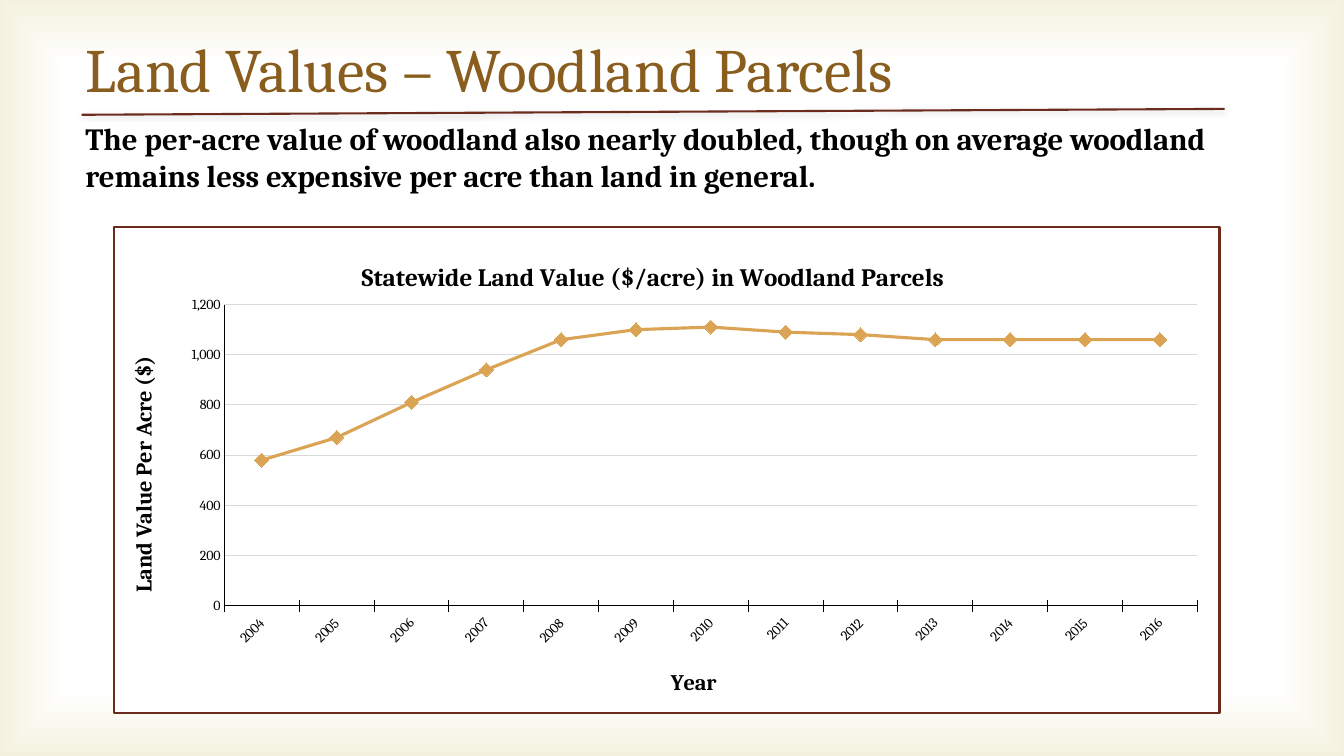
from lxml import etree
from pptx import Presentation
from pptx.chart.data import CategoryChartData
from pptx.dml.color import RGBColor
from pptx.enum import chart as kinds, shapes, text
from pptx.oxml import parse_xml
from pptx.oxml.ns import nsdecls, qn
from pptx.util import Pt

FACE = "Cambria"
BLACK, BROWN, RUST, GOLD, GREY = "000000", "895D1D", "6B2B1D", "DBA455", "D9D9D9"
YEARS = [str(year) for year in range(2004, 2017)]
PRICES = [580, 670, 810, 940, 1060, 1100, 1110, 1090, 1080, 1060, 1060, 1060, 1060]


def color(code):
    return RGBColor.from_string(code)


def assign(obj, values):
    for name, value in values.items():
        setattr(obj, name, value)


def style(font, size, code=BLACK, bold=False):
    assign(font, {"name": FACE, "size": Pt(size), "bold": bold})
    font.color.rgb = color(code)


def stroke(line, code, width):
    line.color.rgb = color(code)
    line.width = Pt(width)


def write(frame, words, size, code=BLACK, bold=False):
    frame.text = words
    para = frame.paragraphs[0]
    para.alignment = text.PP_ALIGN.LEFT
    style(para.runs[0].font, size, code, bold)


def add_glow(slide, wide, high):
    """Cover the slide with white that fades to pale yellow at its edges."""
    rect = slide.shapes.add_shape(shapes.MSO_SHAPE.RECTANGLE, 0, 0, wide, high)
    rect.shadow.inherit = False
    rect.line.fill.background()
    stops = "".join(
        f'<a:gs pos="{pos}000"><a:srgbClr val="{code}"/></a:gs>'
        for pos, code in ((0, "FFFFFF"), (83, "FFFFFF"), (100, "F4F2DF")))
    fill = parse_xml(
        f'<a:gradFill {nsdecls("a")} rotWithShape="1"><a:gsLst>{stops}</a:gsLst>'
        '<a:path path="rect"><a:fillToRect l="50000" t="50000" r="50000" b="50000"/>'
        '</a:path></a:gradFill>')
    rect._element.spPr.find(qn("a:prstGeom")).addnext(fill)
    slide.shapes._spTree.insert(2, rect._element)


def add_title(slide, words):
    title = slide.shapes.title
    assign(title, {"left": Pt(54), "top": Pt(7.2), "width": Pt(782), "height": Pt(82.8)})
    title.text_frame.vertical_anchor = text.MSO_ANCHOR.MIDDLE
    write(title.text_frame, words, 44, BROWN)


def add_text(slide, words):
    box = slide.shapes.add_textbox(Pt(54), Pt(82), Pt(858), Pt(60.5))
    box.text_frame.word_wrap = True
    write(box.text_frame, words, 22, bold=True)


def add_rule(slide):
    rule = slide.shapes.add_connector(
        shapes.MSO_CONNECTOR.STRAIGHT, Pt(58.3), Pt(82), Pt(874.8), Pt(77.8))
    stroke(rule.line, RUST, 1.5)
    rule._element.spPr.append(parse_xml(
        f'<a:effectLst {nsdecls("a")}>'
        f'<a:outerShdw blurRad="{Pt(3)}" dist="{Pt(1)}" dir="5400000">'
        f'<a:srgbClr val="{BLACK}"><a:alpha val="15000"/></a:srgbClr>'
        '</a:outerShdw></a:effectLst>'))


def place(part, index, inner=False, **spots):
    """Give a chart part a fixed layout, in fractions of the chart."""
    for old in part.findall(qn("c:layout")):
        part.remove(old)
    layout = etree.Element(qn("c:layout"))
    manual = etree.SubElement(layout, qn("c:manualLayout"))
    if inner:
        etree.SubElement(manual, qn("c:layoutTarget"), val="inner")
    for key in ("x", "y"):
        etree.SubElement(manual, qn(f"c:{key}Mode"), val="edge")
    for key, value in spots.items():
        etree.SubElement(manual, qn(f"c:{key}"), val=str(value))
    part.insert(index, layout)


def head(title, words, size, x, y):
    write(title.text_frame, words, size, bold=True)
    place(title._element, 1, x=x, y=y)


def frame(chart):
    """Fill the chart area and draw its square-cornered border."""
    space = chart._chartSpace
    space[0].addnext(parse_xml(f'<c:roundedCorners {nsdecls("c")} val="0"/>'))
    space.find(qn("c:chart")).addnext(parse_xml(
        f'<c:spPr {nsdecls("c", "a")}><a:solidFill><a:srgbClr val="FFFFFF"/></a:solidFill>'
        f'<a:ln w="{Pt(1.5)}"><a:solidFill><a:srgbClr val="{RUST}"/></a:solidFill></a:ln>'
        '</c:spPr>'))


def format_axes(chart):
    marks = kinds.XL_TICK_MARK
    years, prices = chart.category_axis, chart.value_axis
    for axis, mark in ((years, marks.CROSS), (prices, marks.NONE)):
        assign(axis, {"major_tick_mark": mark, "minor_tick_mark": marks.NONE})
        stroke(axis.format.line, BLACK, 0.75)
        style(axis.tick_labels.font, 10)
    assign(prices, {"minimum_scale": 0, "maximum_scale": 1200, "major_unit": 200,
                    "has_major_gridlines": True})
    assign(prices.tick_labels, {"number_format": "#,##0", "number_format_is_linked": False})
    stroke(prices.major_gridlines.format.line, GREY, 0.75)
    years._element.find(qn("c:txPr")).find(qn("a:bodyPr")).set("rot", "-2700000")
    head(years.axis_title, "Year", 16, 0.5, 0.9)
    head(prices.axis_title, "Land Value Per Acre ($)", 16, 0.01, 0.26)
    body = prices.axis_title.text_frame._txBody.bodyPr
    assign_xml = {"rot": "-5400000", "vert": "horz"}
    for name, value in assign_xml.items():
        body.set(name, value)


def format_line(chart):
    chart.plots[0].vary_by_categories = False
    series = chart.plots[0].series[0]
    series.smooth = False
    stroke(series.format.line, GOLD, 2.25)
    marker = series.marker
    assign(marker, {"style": kinds.XL_MARKER_STYLE.DIAMOND, "size": 10})
    marker.format.fill.solid()
    marker.format.fill.fore_color.rgb = color(GOLD)
    marker.format.line.fill.background()


def add_chart(slide):
    data = CategoryChartData()
    data.categories = YEARS
    data.add_series("Series 1", PRICES)
    chart = slide.shapes.add_chart(
        kinds.XL_CHART_TYPE.LINE_MARKERS, Pt(80.6), Pt(161.3), Pt(791.3), Pt(348.5), data).chart
    assign(chart, {"has_legend": False, "has_title": True})
    style(chart.font, 10)
    head(chart.chart_title, "Statewide Land Value ($/acre) in Woodland Parcels", 18, 0.22, 0.06)
    format_axes(chart)
    format_line(chart)
    plot = chart._chartSpace.find(qn("c:chart")).find(qn("c:plotArea"))
    place(plot, 0, inner=True, x=0.1, y=0.16, w=0.88, h=0.62)
    frame(chart)


def main():
    deck = Presentation()
    assign(deck, {"slide_width": Pt(960), "slide_height": Pt(540)})
    slide = deck.slides.add_slide(deck.slide_layouts[5])
    add_glow(slide, deck.slide_width, deck.slide_height)
    add_title(slide, "Land Values – Woodland Parcels")
    add_text(slide, "The per-acre value of woodland also nearly doubled, though on average "
                    "woodland remains less expensive per acre than land in general.")
    add_rule(slide)
    add_chart(slide)
    deck.save("out.pptx")


if __name__ == "__main__":
    main()
